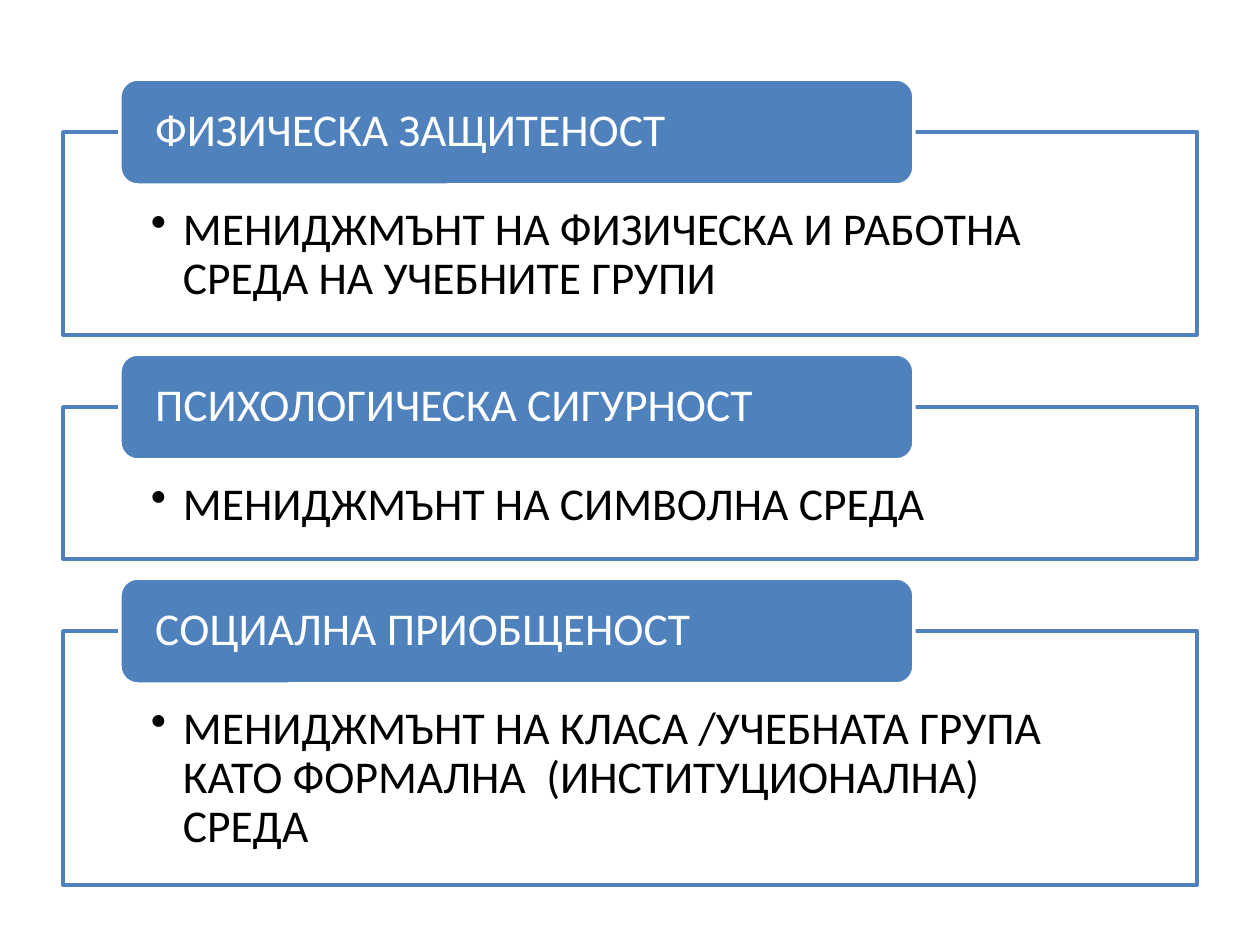
from lxml.etree import SubElement
from pptx import Presentation
from pptx.dml.color import RGBColor
from pptx.enum.shapes import MSO_SHAPE
from pptx.enum.text import MSO_ANCHOR, PP_ALIGN
from pptx.oxml.ns import qn
from pptx.util import Emu, Pt

BLUE = RGBColor(0x4F, 0x81, 0xBD)
WHITE = RGBColor(0xFF, 0xFF, 0xFF)
BLACK = RGBColor(0, 0, 0)

# Box height, heading, body
PARTS = [
    (203, "ФИЗИЧЕСКА ЗАЩИТЕНОСТ",
     "МЕНИДЖМЪНТ НА ФИЗИЧЕСКА И РАБОТНА СРЕДА НА УЧЕБНИТЕ ГРУПИ"),
    (152, "ПСИХОЛОГИЧЕСКА СИГУРНОСТ", "МЕНИДЖМЪНТ НА СИМВОЛНА СРЕДА"),
    (254, "СОЦИАЛНА ПРИОБЩЕНОСТ",
     "МЕНИДЖМЪНТ НА КЛАСА /УЧЕБНАТА ГРУПА КАТО ФОРМАЛНА  (ИНСТИТУЦИОНАЛНА) СРЕДА"),
]
GAP = 72
HEAD = 106


def px(n):
    return Emu(round(n * 914400 / 126))


def panel(kind, place, fill, edge, insets, anchor, text, ink):
    shape = slide.shapes.add_shape(kind, *map(px, place))
    shape.shadow.inherit = False
    shape.fill.solid()
    shape.fill.fore_color.rgb = fill
    shape.line.color.rgb = edge
    shape.line.width = Pt(2)
    frame = shape.text_frame
    frame.word_wrap = True
    frame.vertical_anchor = anchor
    (frame.margin_left, frame.margin_top,
     frame.margin_right, frame.margin_bottom) = map(px, insets)
    para = frame.paragraphs[0]
    para.alignment = PP_ALIGN.LEFT
    para.line_spacing = 0.9
    run = para.add_run()
    run.text = text
    run.font.name = "Calibri"
    run.font.size = Pt(26)
    run.font.color.rgb = ink
    return shape


deck = Presentation()
deck.slide_width, deck.slide_height = px(1260), px(945)
slide = deck.slides.add_slide(deck.slide_layouts[6])

top = 132
for high, head, body in PARTS:
    # Outlined box with a bullet
    box = panel(MSO_SHAPE.RECTANGLE, (63, top, 1134, high), WHITE, BLUE,
                (88, 74, 88, 25), MSO_ANCHOR.TOP, body, BLACK)
    tint = box.fill._xPr.find(qn("a:solidFill"))[0]
    SubElement(tint, qn("a:alpha"), val="90000")
    para = box.text_frame.paragraphs[0]
    para.level = 1
    props = para._p.get_or_add_pPr()
    props.set("marL", str(px(32)))
    props.set("indent", str(-px(32)))
    SubElement(props, qn("a:buChar"), char="•")

    # Heading centred on the top edge of the box
    panel(MSO_SHAPE.ROUNDED_RECTANGLE, (120, top - HEAD // 2, 794, HEAD),
          BLUE, WHITE, (30, 0, 30, 0), MSO_ANCHOR.MIDDLE, head, WHITE)
    top += high + GAP

deck.save("out.pptx")
